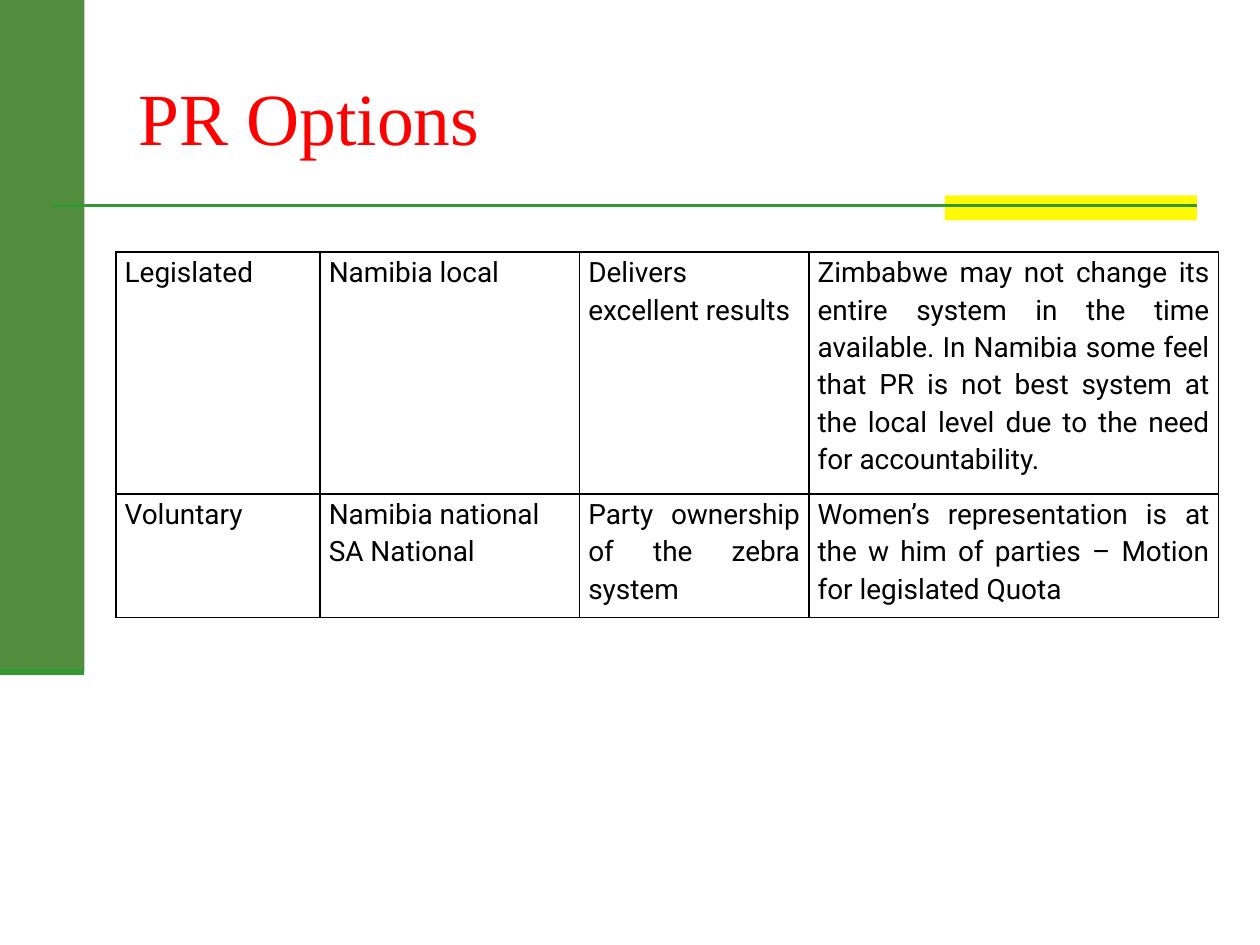
from dataclasses import dataclass

from lxml.etree import SubElement
from pptx import Presentation
from pptx.dml.color import RGBColor
from pptx.enum.shapes import MSO_CONNECTOR, MSO_SHAPE
from pptx.enum.text import MSO_ANCHOR, PP_ALIGN
from pptx.oxml.ns import qn
from pptx.util import Emu, Pt

EMU_PER_PX = 9144  # 100 px to the inch


def px(length):
    return Emu(length * EMU_PER_PX)


def apply(target, values):
    for attribute, value in values.items():
        setattr(target, attribute, value)


@dataclass(frozen=True)
class Theme:
    sidebar: str = "538E3E"
    accent: str = "FFF905"
    rule: str = "339933"
    title: str = "FF0000"
    ink: str = "000000"
    title_font: str = "Times New Roman"
    body_font: str = "Roboto"
    title_size: int = 42
    body_size: int = 16
    border_width: int = 1


class SlideBuilder:
    def __init__(self, slide, theme):
        self.slide = slide
        self.theme = theme

    def bar(self, left, top, width, height, color):
        bar = self.slide.shapes.add_shape(
            MSO_SHAPE.RECTANGLE, px(left), px(top), px(width), px(height))
        bar.shadow.inherit = False
        bar.fill.solid()
        bar.fill.fore_color.rgb = RGBColor.from_string(color)
        bar.line.fill.background()

    def rule(self, left, right, y, weight):
        rule = self.slide.shapes.add_connector(
            MSO_CONNECTOR.STRAIGHT, px(left), px(y), px(right), px(y))
        rule.line.color.rgb = RGBColor.from_string(self.theme.rule)
        rule.line.width = Pt(weight)
        SubElement(rule._element.spPr, qn("a:effectLst"))

    def add_text(self, paragraph, text, font, size, color):
        run = paragraph.add_run()
        run.text = text
        apply(run.font, {"name": font, "size": Pt(size)})
        run.font.color.rgb = RGBColor.from_string(color)

    def title(self, left, top, width, height, text):
        frame = self.slide.shapes.add_textbox(
            px(left), px(top), px(width), px(height)).text_frame
        apply(frame, {"word_wrap": True, "vertical_anchor": MSO_ANCHOR.MIDDLE})
        self.add_text(frame.paragraphs[0], text, self.theme.title_font,
                      self.theme.title_size, self.theme.title)

    def table(self, left, top, column_widths, row_heights, rows):
        table = self.slide.shapes.add_table(
            len(rows), len(column_widths), px(left), px(top),
            px(sum(column_widths)), px(sum(row_heights))).table
        apply(table, {"first_row": False, "horz_banding": False})
        for column, width in zip(table.columns, column_widths):
            column.width = px(width)
        for row, height, texts in zip(table.rows, row_heights, rows):
            row.height = px(height)
            for cell, text in zip(row.cells, texts):
                self.fill_cell(cell, text)

    def fill_cell(self, cell, text):
        apply(cell, {"margin_left": px(7), "margin_right": px(7),
                     "margin_top": 0, "margin_bottom": 0})
        self.border(cell)
        cell.fill.background()
        frame = cell.text_frame
        for index, line in enumerate(text.split("\n")):
            paragraph = frame.add_paragraph() if index else frame.paragraphs[0]
            apply(paragraph, {"alignment": PP_ALIGN.JUSTIFY, "line_spacing": 1.15})
            self.add_text(paragraph, line, self.theme.body_font,
                          self.theme.body_size, self.theme.ink)

    def border(self, cell):
        properties = cell._tc.get_or_add_tcPr()
        for side in ("a:lnL", "a:lnR", "a:lnT", "a:lnB"):
            edge = SubElement(properties, qn(side), w=str(Pt(self.theme.border_width)))
            fill = SubElement(edge, qn("a:solidFill"))
            SubElement(fill, qn("a:srgbClr"), val=self.theme.ink)


def main():
    presentation = Presentation()
    apply(presentation, {"slide_width": px(1000), "slide_height": px(750)})
    theme = Theme()
    builder = SlideBuilder(
        presentation.slides.add_slide(presentation.slide_layouts[6]), theme)

    builder.bar(0, 0, 67, 533, theme.sidebar)
    builder.bar(750, 155, 200, 20, theme.accent)
    builder.rule(42, 950, 163, 1.5)
    builder.rule(0, 67, 533, 3.5)
    builder.title(100, 30, 850, 125, "PR Options")

    options = [
        ("Legislated", "Namibia local", "Delivers excellent results",
         "Zimbabwe may not change its entire system in the time available. "
         "In Namibia some feel that PR is not best system at the local level "
         "due to the need for accountability."),
        ("Voluntary", "Namibia national\nSA National",
         "Party ownership of the zebra system",
         "Women’s representation is at the w him of parties – "
         "Motion for legislated Quota"),
    ]
    builder.table(92, 200, (162, 206, 182, 325), (192, 98), options)
    presentation.save("out.pptx")


if __name__ == "__main__":
    main()
